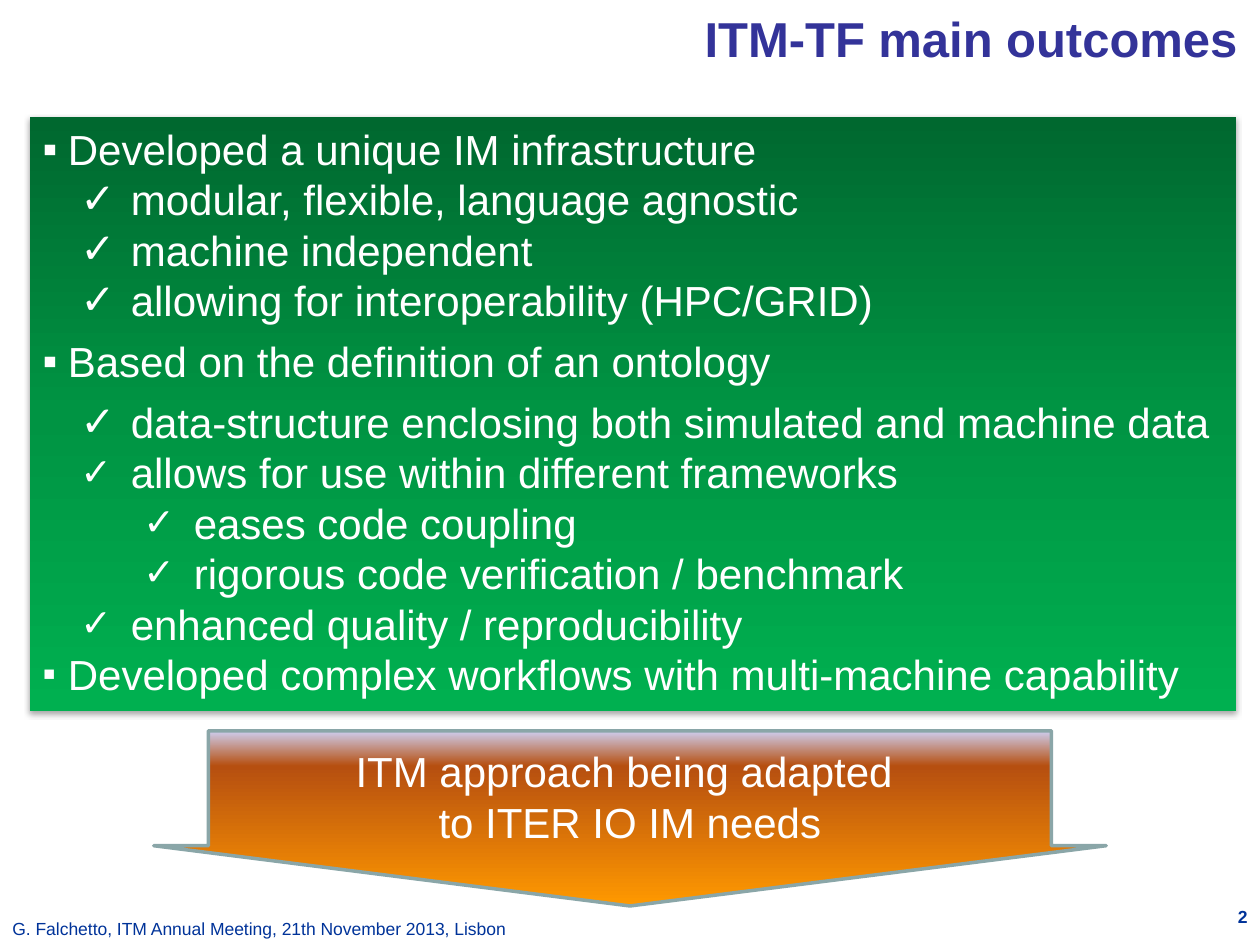
from dataclasses import dataclass

from lxml import etree
from pptx import Presentation
from pptx.dml.color import RGBColor
from pptx.enum.shapes import MSO_SHAPE
from pptx.enum.text import MSO_ANCHOR, PP_ALIGN
from pptx.oxml.ns import qn
from pptx.util import Inches, Pt

RECTANGLE, DOWN_ARROW = MSO_SHAPE.RECTANGLE, MSO_SHAPE.DOWN_ARROW
LEFT, CENTER, RIGHT = PP_ALIGN.LEFT, PP_ALIGN.CENTER, PP_ALIGN.RIGHT
TOP, MIDDLE = MSO_ANCHOR.TOP, MSO_ANCHOR.MIDDLE


@dataclass(frozen=True)
class Theme:
    font: str = "Arial"
    title_size: int = 28
    body_size: int = 24
    footer_size: int = 10
    title: str = "333399"
    footer: str = "003399"
    light: str = "FFFFFF"
    arrow_line: str = "8AA6A8"
    panel_stops: tuple = ((0, "00682F"), (50, "009443"), (100, "00B050"))
    arrow_stops: tuple = ((0, "FF9900"), (80, "B64F10"), (100, "CECEEF"))


THEME = Theme()

# Left indent and hanging width in inches, and the bullet, for each level
LEVELS = ((0.2, 0.2, "▪"), (0.7, 0.4, "✓"), (1.2, 0.4, "✓"))

# Level, text, space before in points, bullet size in percent
OUTCOMES = (
    (0, "Developed a unique IM infrastructure", 0, 100),
    (1, "modular, flexible, language agnostic", 0, 100),
    (1, "machine independent", 0, 100),
    (1, "allowing for interoperability (HPC/GRID)", 0, 100),
    (0, "Based on the definition of an ontology", 6, 100),
    (1, "data-structure enclosing both simulated and machine data", 6, 100),
    (1, "allows for use within different frameworks", 0, 90),
    (2, "eases code coupling", 0, 90),
    (2, "rigorous code verification / benchmark", 0, 90),
    (1, "enhanced quality / reproducibility", 0, 90),
    (0, "Developed complex workflows with multi-machine capability", 0, 90),
)


def add_child(parent, tag, **attributes):
    child = etree.SubElement(parent, qn(tag))
    for name, value in attributes.items():
        child.set(name, str(value))
    return child


def style_font(para, size, color, bold=False):
    for span in para.runs:
        span.font.name = THEME.font
        span.font.size = Pt(size)
        span.font.bold = bold
        span.font.color.rgb = RGBColor.from_string(color)


def set_gradient(shape, stops, angle):
    """Fill with (percent, colour) stops; the angle runs clockwise in degrees."""
    shape.fill.gradient()
    gradient = shape._element.spPr.find(qn("a:gradFill"))
    stop_list = gradient.find(qn("a:gsLst"))
    for old_stop in list(stop_list):
        stop_list.remove(old_stop)
    for percent, color in stops:
        stop = add_child(stop_list, "a:gs", pos=percent * 1000)
        add_child(stop, "a:srgbClr", val=color)
    gradient.find(qn("a:lin")).set("ang", str(angle * 60000))


def set_soft_shadow(shape):
    shape.shadow.inherit = False
    effects = shape._element.spPr.find(qn("a:effectLst"))
    shadow = add_child(effects, "a:outerShdw", blurRad=Pt(3.1), dist=Pt(1.8),
                       dir=90 * 60000, rotWithShape=0)
    color = add_child(shadow, "a:srgbClr", val="000000")
    add_child(color, "a:alpha", val=35000)


def set_bullet(para, level, size_percent):
    indent, hanging, character = LEVELS[level]
    para.level = level
    properties = para._p.get_or_add_pPr()
    properties.set("marL", str(Inches(indent)))
    properties.set("indent", str(-Inches(hanging)))
    color = add_child(properties, "a:buClr")
    add_child(color, "a:srgbClr", val=THEME.light)
    add_child(properties, "a:buSzPct", val=size_percent * 1000)
    add_child(properties, "a:buFont", typeface=THEME.font)
    add_child(properties, "a:buChar", char=character)


def add_label(page, box, text, size, color, align=LEFT, bold=False, anchor=TOP):
    frame = page.shapes.add_textbox(*map(Inches, box)).text_frame
    frame.word_wrap = True
    frame.vertical_anchor = anchor
    frame.text = text
    para = frame.paragraphs[0]
    para.alignment = align
    style_font(para, size, color, bold)


def add_outcomes(page, box):
    panel = page.shapes.add_shape(RECTANGLE, *map(Inches, box))
    set_gradient(panel, THEME.panel_stops, 90)
    panel.line.fill.background()
    set_soft_shadow(panel)
    frame = panel.text_frame
    frame.word_wrap = True
    frame.vertical_anchor = TOP
    frame.text = "\n".join(text for _, text, _, _ in OUTCOMES)
    for para, (level, _, space, bullet_size) in zip(frame.paragraphs, OUTCOMES):
        set_bullet(para, level, bullet_size)
        para.alignment = LEFT
        para.space_before = Pt(space)
        style_font(para, THEME.body_size, THEME.light)


def add_conclusion(page, box):
    arrow = page.shapes.add_shape(DOWN_ARROW, *map(Inches, box))
    arrow.adjustments[0] = 0.885
    arrow.adjustments[1] = 0.344
    set_gradient(arrow, THEME.arrow_stops, 270)
    arrow.line.color.rgb = RGBColor.from_string(THEME.arrow_line)
    arrow.line.width = Pt(2)
    arrow.shadow.inherit = False
    frame = arrow.text_frame
    frame.word_wrap = True
    frame.vertical_anchor = MIDDLE
    frame.margin_top = Inches(0.12)
    frame.text = "ITM approach being adapted \nto ITER IO IM needs"
    for para in frame.paragraphs:
        para.alignment = CENTER
        style_font(para, THEME.body_size, THEME.light)


def main():
    deck = Presentation()
    deck.slide_width, deck.slide_height = Inches(10), Inches(7.5)
    page = deck.slides.add_slide(deck.slide_layouts[6])
    add_label(page, (3.66, 0, 6.26, 0.6), "ITM-TF main outcomes",
              THEME.title_size, THEME.title, RIGHT, True, MIDDLE)
    add_outcomes(page, (0.24, 0.93, 9.57, 4.71))
    add_label(page, (0, 7.24, 4.23, 0.26),
              "G. Falchetto, ITM Annual Meeting, 21th November 2013, Lisbon",
              THEME.footer_size, THEME.footer)
    add_label(page, (9.17, 7.14, 0.83, 0.36), "2",
              THEME.footer_size, THEME.footer, RIGHT, True)
    add_conclusion(page, (1.22, 5.8, 7.56, 1.39))
    deck.save("out.pptx")


if __name__ == "__main__":
    main()
